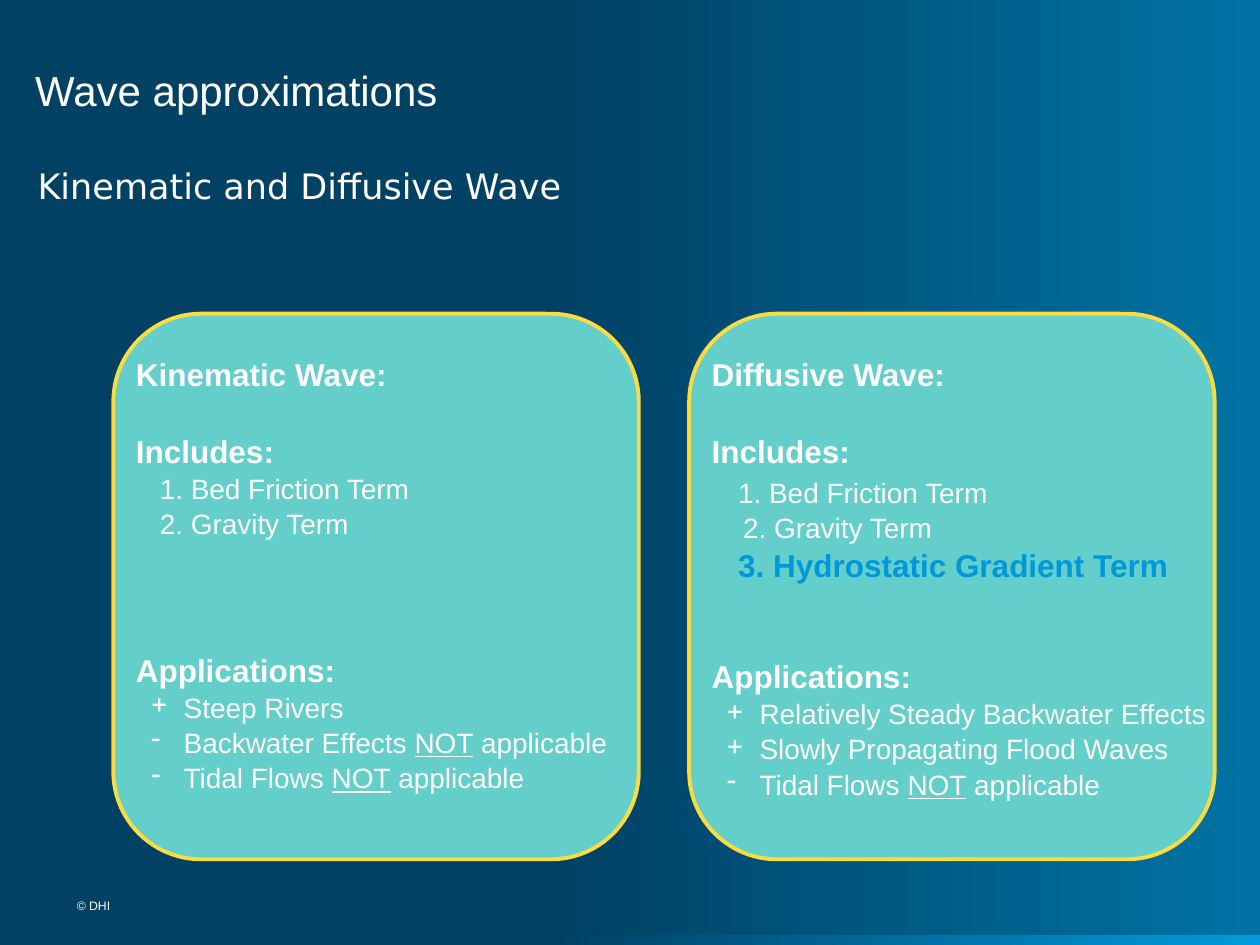
import pptx
import pptx.dml.color
import pptx.enum.shapes
import pptx.enum.text
import pptx.oxml
import pptx.oxml.ns
import pptx.util

Inches = pptx.util.Inches
Pt = pptx.util.Pt
Anchor = pptx.enum.text.MSO_ANCHOR
Shape = pptx.enum.shapes.MSO_SHAPE


def color(code):
    return pptx.dml.color.RGBColor.from_string(code)


class Deck:
    white, navy, teal, gold, blue = "FFFFFF", "004164", "63CECA", "FADC41", "0098DB"
    face = "Arial"

    def __init__(self, wide, high):
        self.show = pptx.Presentation()
        self.show.slide_width = Inches(wide)
        self.show.slide_height = Inches(high)
        self.slide = self.show.slides.add_slide(self.show.slide_layouts[6])

    def blend(self, fill, end):
        fill.gradient()
        fill.gradient_angle = 0
        for stop, place, code in zip(fill.gradient_stops, (0.44, 1), (self.navy, end)):
            stop.position = place
            stop.color.rgb = color(code)

    def shape(self, kind, *area):
        item = self.slide.shapes.add_shape(kind, *map(Inches, area))
        item.shadow.inherit = False
        return item

    def strip(self, end, *area):
        item = self.shape(Shape.RECTANGLE, *area)
        self.blend(item.fill, end)
        item.line.fill.background()

    def card(self, *area):
        item = self.shape(Shape.ROUNDED_RECTANGLE, *area)
        item.adjustments[0] = 0.167
        item.fill.solid()
        item.fill.fore_color.rgb = color(self.teal)
        item.line.color.rgb = color(self.gold)
        item.line.width = Pt(2.25)

    def frame(self, area, inset=True, anchor=Anchor.TOP):
        frame = self.slide.shapes.add_textbox(*map(Inches, area)).text_frame
        frame.word_wrap = True
        frame.vertical_anchor = anchor
        if not inset:
            frame.margin_left = frame.margin_right = 0
            frame.margin_top = frame.margin_bottom = 0
        return frame

    def style(self, para, size, code=white, bold=False, face=face):
        font = para.font
        font.size, font.bold, font.name = Pt(size), bold, face
        font.color.rgb = color(code)

    def label(self, text, size, area, face=face, **opts):
        para = self.frame(area, **opts).paragraphs[0]
        para.text = text
        self.style(para, size, face=face)

    def list(self, area, rows):
        frame = self.frame(area)
        frame.auto_size = pptx.enum.text.MSO_AUTO_SIZE.SHAPE_TO_FIT_TEXT
        for pos, row in enumerate(rows):
            para = frame.add_paragraph() if pos else frame.paragraphs[0]
            self.line(para, **row)

    def line(self, para, text, size=16, bold=False, code=white, gap=0, left=0, mark=None):
        for part in text.partition("NOT"):
            if part:
                run = para.add_run()
                run.text = part
                if part == "NOT":
                    run.font.underline = True
        para.line_spacing = 1.05
        if gap:
            para.space_before = Pt(gap)
        props = para._p.get_or_add_pPr()
        props.set("marL", str(Inches(left)))
        if mark:
            props.set("indent", str(Inches(-0.26)))
            bullet = pptx.oxml.parse_xml(
                f'<a:buChar {pptx.oxml.ns.nsdecls("a")} char="{mark}"/>')
            props.append(bullet)
        self.style(para, size, code, bold)


def head(text, gap=0):
    return dict(text=text, size=18, bold=True, gap=gap)


def term(text, left, **opts):
    return dict(text=text, left=left, **opts)


def use(mark, text):
    return dict(text=text, mark=mark, left=0.38)


def main():
    deck = Deck(10, 7.5)
    deck.blend(deck.slide.background.fill, "0073A4")
    deck.strip("009BDC", 0, 7.42, 10, 0.08)
    deck.label("Wave approximations", 24, (0.28, 0.25, 8.6, 0.66),
               inset=False, anchor=Anchor.BOTTOM)
    deck.label("Kinematic and Diffusive Wave", 20, (0.2, 0.93, 7.4, 1.08),
               face="DejaVu Sans", anchor=Anchor.MIDDLE)

    kinematic = [
        head("Kinematic Wave:"),
        head("Includes:", 21.7),
        term("1. Bed Friction Term", 0.19),
        term("2. Gravity Term", 0.19),
        head("Applications:", 62),
        use("+", "Steep Rivers"),
        use("-", "Backwater Effects NOT applicable"),
        use("-", "Tidal Flows NOT applicable"),
    ]
    diffusive = [
        head("Diffusive Wave:"),
        head("Includes:", 21.7),
        term("1. Bed Friction Term", 0.21, gap=2),
        term("2. Gravity Term", 0.25),
        term("3. Hydrostatic Gradient Term", 0.21, size=18, bold=True, code=deck.blue),
        head("Applications:", 41),
        use("+", "Relatively Steady Backwater Effects"),
        use("+", "Slowly Propagating Flood Waves"),
        use("-", "Tidal Flows NOT applicable"),
    ]
    for left, wide, rows in ((0.9, 4.65, kinematic), (5.47, 4.18, diffusive)):
        deck.card(left, 2.49, 4.17, 4.33)
        deck.list((left + 0.08, 2.75, wide, 3.52), rows)

    deck.label("© DHI", 7, (0.61, 7.13, 1.55, 0.19), inset=False)
    deck.show.save("out.pptx")


if __name__ == "__main__":
    main()
